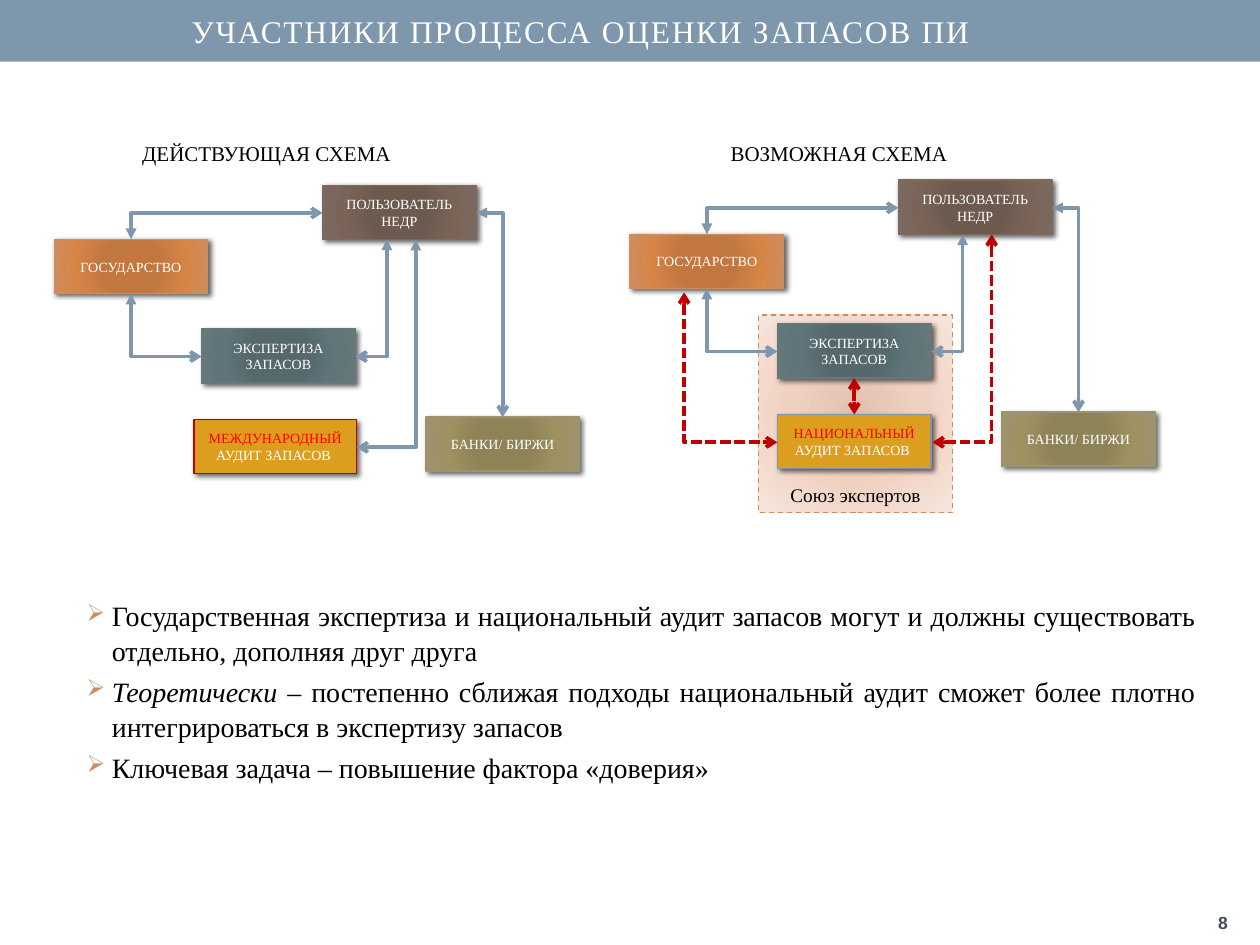
from dataclasses import dataclass

from lxml import etree
from pptx import Presentation
from pptx.dml.color import RGBColor
from pptx.enum.dml import MSO_LINE
from pptx.enum.shapes import MSO_CONNECTOR, MSO_SHAPE
from pptx.enum.text import MSO_ANCHOR, PP_ALIGN
from pptx.oxml import parse_xml
from pptx.oxml.ns import nsdecls, qn
from pptx.util import Inches, Pt

RECTANGLE = MSO_SHAPE.RECTANGLE
ELBOW, STRAIGHT = MSO_CONNECTOR.ELBOW, MSO_CONNECTOR.STRAIGHT
DASH, SHORT_DASH = MSO_LINE.DASH, MSO_LINE.SQUARE_DOT
TOP, MIDDLE, BOTTOM = MSO_ANCHOR.TOP, MSO_ANCHOR.MIDDLE, MSO_ANCHOR.BOTTOM
LEFT, CENTER, JUSTIFY = PP_ALIGN.LEFT, PP_ALIGN.CENTER, PP_ALIGN.JUSTIFY

WHITE = RGBColor(0xFF, 0xFF, 0xFF)
BLACK = RGBColor(0, 0, 0)
BLUE = RGBColor(0x7E, 0x97, 0xAD)
NAVY = RGBColor(0x3A, 0x4C, 0x5B)
ORANGE = RGBColor(0xCC, 0x8E, 0x60)
BROWN = RGBColor(0x7A, 0x6A, 0x60)
TEAL = RGBColor(0x67, 0x78, 0x7B)
OLIVE = RGBColor(0x9D, 0x93, 0x6F)
GOLD = RGBColor(0xDC, 0x9E, 0x1F)
DARK_RED = RGBColor(0xC0, 0, 0)
RED = RGBColor(0xFF, 0, 0)

SERIF = "Times New Roman"
BOX_WIDTH, BOX_HEIGHT = 1.22, 0.43
STOPS = (0, 34, 70, 100)


@dataclass(frozen=True)
class Span:
    text: str
    color: RGBColor = WHITE
    size: float = 8
    font: str = SERIF
    bold: bool = False
    italic: bool = False


@dataclass(frozen=True)
class Party:
    """A box of a scheme, placed from the origin of the scheme."""
    x: float
    y: float
    spans: tuple
    line: RGBColor
    gradient: tuple = ()
    width: float = BOX_WIDTH


@dataclass(frozen=True)
class Link:
    """A two-way arrow; the corner comes after a vertical or horizontal run."""
    start: tuple
    end: tuple
    vertical_first: bool = True
    color: RGBColor = BLUE


PARTIES = (
    Party(0, 0.43, (Span("ГОСУДАРСТВО"),), ORANGE,
          ("C6763B", "C17740", "D78547", "CC8E60")),
    Party(2.13, 0, (Span("ПОЛЬЗОВАТЕЛЬ НЕДР"),), BROWN,
          ("6E594D", "6D5A4E", "7A6457", "7A6A60")),
    Party(1.17, 1.14, (Span("ЭКСПЕРТИЗА ЗАПАСОВ"),), TEAL,
          ("546A6E", "55696D", "5F7579", "67787B")),
    Party(2.95, 1.84, (Span("БАНКИ/ БИРЖИ"),), OLIVE,
          ("908355", "8E8257", "9F9161", "9D936F")),
)
LINKS = (
    Link((0.61, 0.43), (2.13, 0.22)),
    Link((0.61, 0.86), (1.17, 1.36)),
    Link((2.64, 0.43), (2.39, 1.36)),
    Link((3.35, 0.22), (3.56, 1.84), vertical_first=False),
)
INTERNATIONAL = Party(1.11, 1.86, (Span("МЕЖДУНАРОДНЫЙ ", RED), Span("АУДИТ ЗАПАСОВ ")),
                      DARK_RED, width=1.29)
NATIONAL = Party(1.17, 1.86, (Span("НАЦИОНАЛЬНЫЙ", RED), Span(" АУДИТ ЗАПАСОВ ")), BLUE)
AUDIT_START, AUDIT_END = (2.87, 0.43), (2.4, 2.08)
CURRENT_LINKS = (Link(AUDIT_START, AUDIT_END),)
POSSIBLE_LINKS = (
    Link(AUDIT_START, AUDIT_END, color=DARK_RED),
    Link((1.78, 1.57), (1.78, 1.86), color=DARK_RED),
    Link((0.43, 0.89), (1.17, 2.08), color=DARK_RED),
)
BULLETS = (
    (Span("Государственная экспертиза и национальный аудит запасов могут и должны "
          "существовать отдельно, дополняя друг друга", BLACK, 16),),
    (Span("Теоретически", BLACK, 16, italic=True),
     Span(" – постепенно сближая подходы национальный аудит сможет более плотно "
          "интегрироваться в экспертизу запасов", BLACK, 16)),
    (Span("Ключевая задача – повышение фактора «доверия»", BLACK, 16),),
)


def write(shape, paragraphs: tuple, align=CENTER, anchor=MIDDLE) -> None:
    frame = shape.text_frame
    frame.word_wrap = True
    frame.vertical_anchor = anchor
    for index, spans in enumerate(paragraphs):
        para = frame.paragraphs[0] if index == 0 else frame.add_paragraph()
        para.alignment = align
        for span in spans:
            run = para.add_run()
            run.text = span.text
            run.font.color.rgb = span.color
            formats = {"name": span.font, "size": Pt(span.size),
                       "bold": span.bold, "italic": span.italic}
            for name, value in formats.items():
                setattr(run.font, name, value)


def add_text(page, left: float, top: float, width: float, height: float,
             paragraphs: tuple, align=LEFT, anchor=TOP):
    box = page.shapes.add_textbox(*map(Inches, (left, top, width, height)))
    write(box, paragraphs, align, anchor)
    return box


def add_box(page, left: float, top: float, width: float, height: float, fill: RGBColor, line=None):
    box = page.shapes.add_shape(RECTANGLE, *map(Inches, (left, top, width, height)))
    box.shadow.inherit = False
    box.fill.solid()
    box.fill.fore_color.rgb = fill
    if line is None:
        box.line.fill.background()
    else:
        box.line.color.rgb = line
        box.line.width = Pt(0.75)
    return box


def set_gradient(shape, colors: tuple, stops: tuple) -> None:
    marks = "".join(f'<a:gs pos="{stop * 1000}"><a:srgbClr val="{color}"/></a:gs>'
                    for stop, color in zip(stops, colors))
    gradient = parse_xml(
        f'<a:gradFill {nsdecls("a")} rotWithShape="1"><a:gsLst>{marks}</a:gsLst>'
        '<a:path path="circle"><a:fillToRect l="100000" t="100000" r="100000" b="100000"/>'
        '</a:path></a:gradFill>')
    properties = shape.element.spPr
    properties.replace(properties.find(qn("a:solidFill")), gradient)


def add_party(page, origin: tuple, party: Party) -> None:
    box = add_box(page, origin[0] + party.x, origin[1] + party.y,
                  party.width, BOX_HEIGHT, GOLD, party.line)
    if party.gradient:
        set_gradient(box, party.gradient, STOPS)
    box.element.spPr.find(qn("a:effectLst")).append(parse_xml(
        f'<a:outerShdw {nsdecls("a")} blurRad="{Pt(3)}" dist="{Pt(2)}" dir="2700000" '
        'rotWithShape="0"><a:srgbClr val="000000"><a:alpha val="60000"/></a:srgbClr>'
        '</a:outerShdw>'))
    write(box, (party.spans,))


def add_link(page, origin: tuple, link: Link) -> None:
    x1, y1 = (base + offset for base, offset in zip(origin, link.start))
    x2, y2 = (base + offset for base, offset in zip(origin, link.end))
    kind, rotation = (STRAIGHT if x1 == x2 else ELBOW), 0
    if kind == ELBOW and link.vertical_first:
        # Lay the bend on its side, then turn it about its centre
        rotation = 270 if x2 > x1 and y2 > y1 else 90
        flip_x = -1 if rotation == 270 or y2 < y1 else 1
        flip_y = -1 if rotation == 90 and x2 > x1 else 1
        middle_x, middle_y = (x1 + x2) / 2, (y1 + y2) / 2
        half_width, half_height = flip_x * abs(y2 - y1) / 2, flip_y * abs(x2 - x1) / 2
        x1, x2 = middle_x - half_width, middle_x + half_width
        y1, y2 = middle_y - half_height, middle_y + half_height
    connector = page.shapes.add_connector(kind, *map(Inches, (x1, y1, x2, y2)))
    properties = connector.element.spPr
    if kind == ELBOW:
        properties.find(qn("a:prstGeom")).set("prst", "bentConnector2")
        properties.find(qn("a:xfrm")).set("rot", str(rotation * 60000))
    connector.line.color.rgb = link.color
    connector.line.width = Pt(2.08)
    head = "triangle"
    if link.color == DARK_RED:
        connector.line.dash_style = SHORT_DASH
        head = "arrow"
    line = properties.find(qn("a:ln"))
    etree.SubElement(line, qn("a:headEnd"), type=head)
    etree.SubElement(line, qn("a:tailEnd"), type="arrow")
    etree.SubElement(properties, qn("a:effectLst"))


def add_scheme(page, origin: tuple, audit: Party, audit_links: tuple) -> None:
    for party in (*PARTIES, audit):
        add_party(page, origin, party)
    for link in (*LINKS, *audit_links):
        add_link(page, origin, link)


def add_bullets(page) -> None:
    box = add_text(page, 0.59, 4.69, 9, 1.57, BULLETS, JUSTIFY)
    for para in box.text_frame.paragraphs:
        para.space_before = Pt(3)
        para.line_spacing = 1.05
        properties = para._p.get_or_add_pPr()
        properties.set("marL", str(Inches(0.2)))
        properties.set("indent", str(Inches(-0.2)))
        color = etree.SubElement(properties, qn("a:buClr"))
        etree.SubElement(color, qn("a:srgbClr"), val=str(ORANGE))
        etree.SubElement(properties, qn("a:buSzPct"), val="85000")
        etree.SubElement(properties, qn("a:buChar"), char="➢")


def main() -> None:
    deck = Presentation()
    deck.slide_width, deck.slide_height = Inches(10), Inches(7.5)
    page = deck.slides.add_slide(deck.slide_layouts[6])

    # Title band
    add_box(page, 0, 0, 10, 0.49, BLUE)
    title = add_text(page, 0.12, -0.01, 8.98, 0.51,
                     ((Span("УЧАСТНИКИ ПРОЦЕССА ОЦЕНКИ ЗАПАСОВ ПИ", WHITE, 18),),),
                     CENTER, MIDDLE)
    title.text_frame.paragraphs[0].runs[0].font._element.set("spc", "100")

    # Frame of the experts' union, behind the possible scheme
    union = add_box(page, 6.02, 2.5, 1.54, 1.57, WHITE, ORANGE)
    set_gradient(union, ("DFC1B2", "F0D0C0", "F7E5DC"), (0, 45, 100))
    union.line.dash_style = DASH
    write(union, ((Span("Союз экспертов", BLACK, 11),),), anchor=BOTTOM)

    # Schemes and their headings
    add_scheme(page, (0.43, 1.47), INTERNATIONAL, CURRENT_LINKS)
    add_scheme(page, (5, 1.43), NATIONAL, POSSIBLE_LINKS)
    for left, heading in ((1.03, "ДЕЙСТВУЮЩАЯ СХЕМА"), (5.7, "ВОЗМОЖНАЯ СХЕМА")):
        add_text(page, left, 1.07, 2.31, 0.3, ((Span(heading, BLACK, 12),),))

    # Conclusions and page number
    add_bullets(page)
    add_text(page, 9.57, 7.14, 0.42, 0.36, ((Span("8", NAVY, 10, "Arial", bold=True),),),
             anchor=MIDDLE)
    deck.save("out.pptx")


if __name__ == "__main__":
    main()
